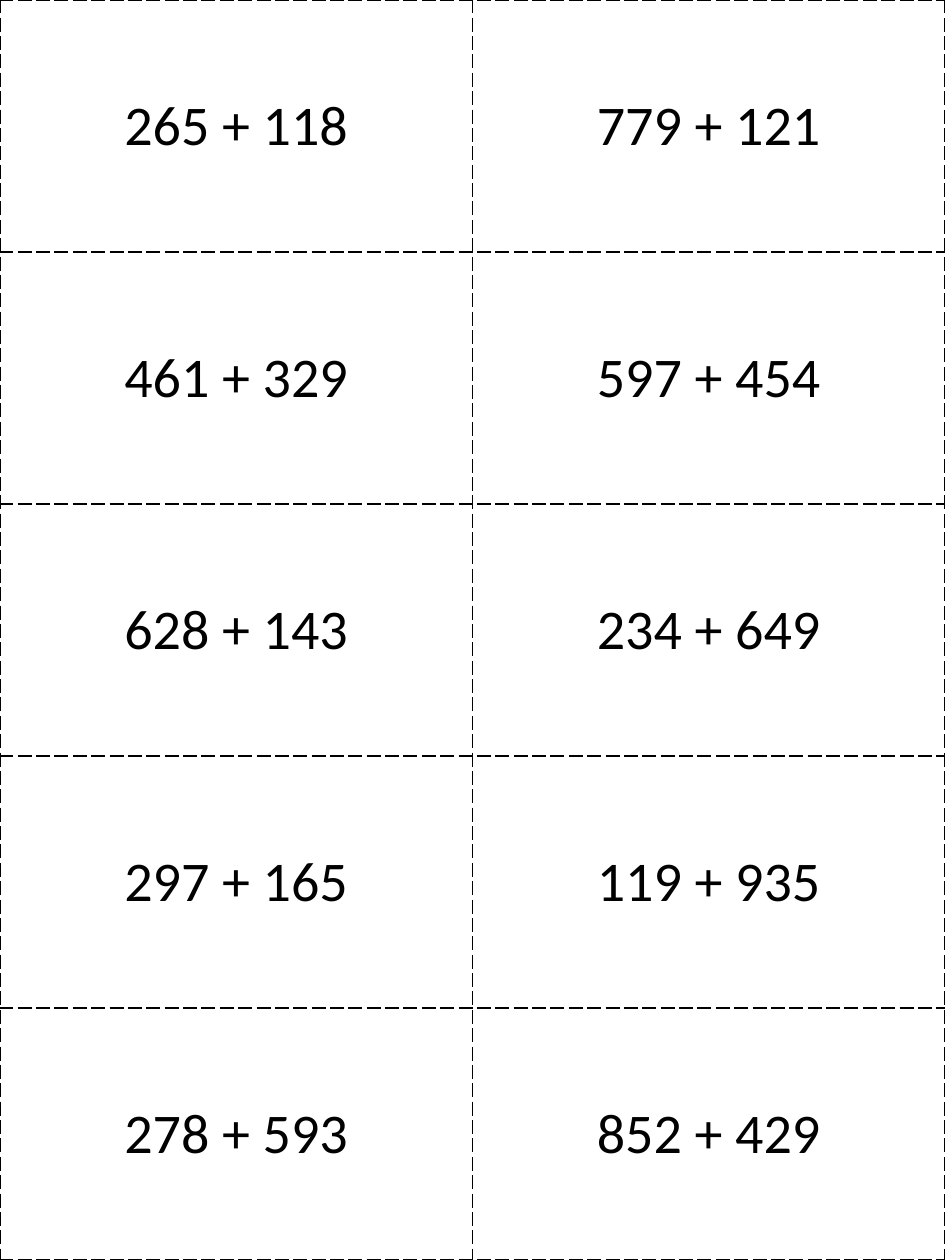
from lxml.etree import SubElement
from pptx import Presentation
from pptx.dml.color import RGBColor
from pptx.enum.text import MSO_ANCHOR, PP_ALIGN
from pptx.oxml.ns import qn
from pptx.util import Inches, Pt

PAGE_WIDTH, PAGE_HEIGHT = 7.5, 10
PROBLEMS = [
    ("265 + 118", "779 + 121"),
    ("461 + 329", "597 + 454"),
    ("628 + 143", "234 + 649"),
    ("297 + 165", "119 + 935"),
    ("278 + 593", "852 + 429"),
]


def color(value):
    return RGBColor.from_string(value)


class CardSheet:
    ink = "000000"
    border_width = 1
    border_dash = "lgDash"
    font_format = {"name": "Calibri", "size": Pt(32), "bold": False}
    table_format = {"first_row": False, "horz_banding": False}

    def __init__(self, page):
        self.page = page

    def apply(self, target, values):
        for name, value in values.items():
            setattr(target, name, value)

    def border(self, cell):
        properties = cell._tc.get_or_add_tcPr()
        for side in ("lnL", "lnR", "lnT", "lnB"):
            line = SubElement(properties, qn(f"a:{side}"), w=str(Pt(self.border_width)))
            fill = SubElement(line, qn("a:solidFill"))
            SubElement(fill, qn("a:srgbClr"), val=self.ink)
            SubElement(line, qn("a:prstDash"), val=self.border_dash)

    def card(self, cell, problem):
        cell.vertical_anchor = MSO_ANCHOR.MIDDLE
        para = cell.text_frame.paragraphs[0]
        para.alignment = PP_ALIGN.CENTER
        span = para.add_run()
        span.text = problem
        self.apply(span.font, self.font_format)
        span.font.color.rgb = color(self.ink)
        self.border(cell)
        cell.fill.background()

    def table(self, problems, left, top, width, height):
        frame = self.page.shapes.add_table(
            len(problems), len(problems[0]),
            Inches(left), Inches(top), Inches(width), Inches(height),
        )
        self.apply(frame.table, self.table_format)
        for row, values in enumerate(problems):
            for column, problem in enumerate(values):
                self.card(frame.table.cell(row, column), problem)


def main():
    deck = Presentation()
    deck.slide_width = Inches(PAGE_WIDTH)
    deck.slide_height = Inches(PAGE_HEIGHT)
    page = deck.slides.add_slide(deck.slide_layouts[6])
    CardSheet(page).table(PROBLEMS, 0, 0, PAGE_WIDTH, PAGE_HEIGHT)
    deck.save("out.pptx")


if __name__ == "__main__":
    main()
